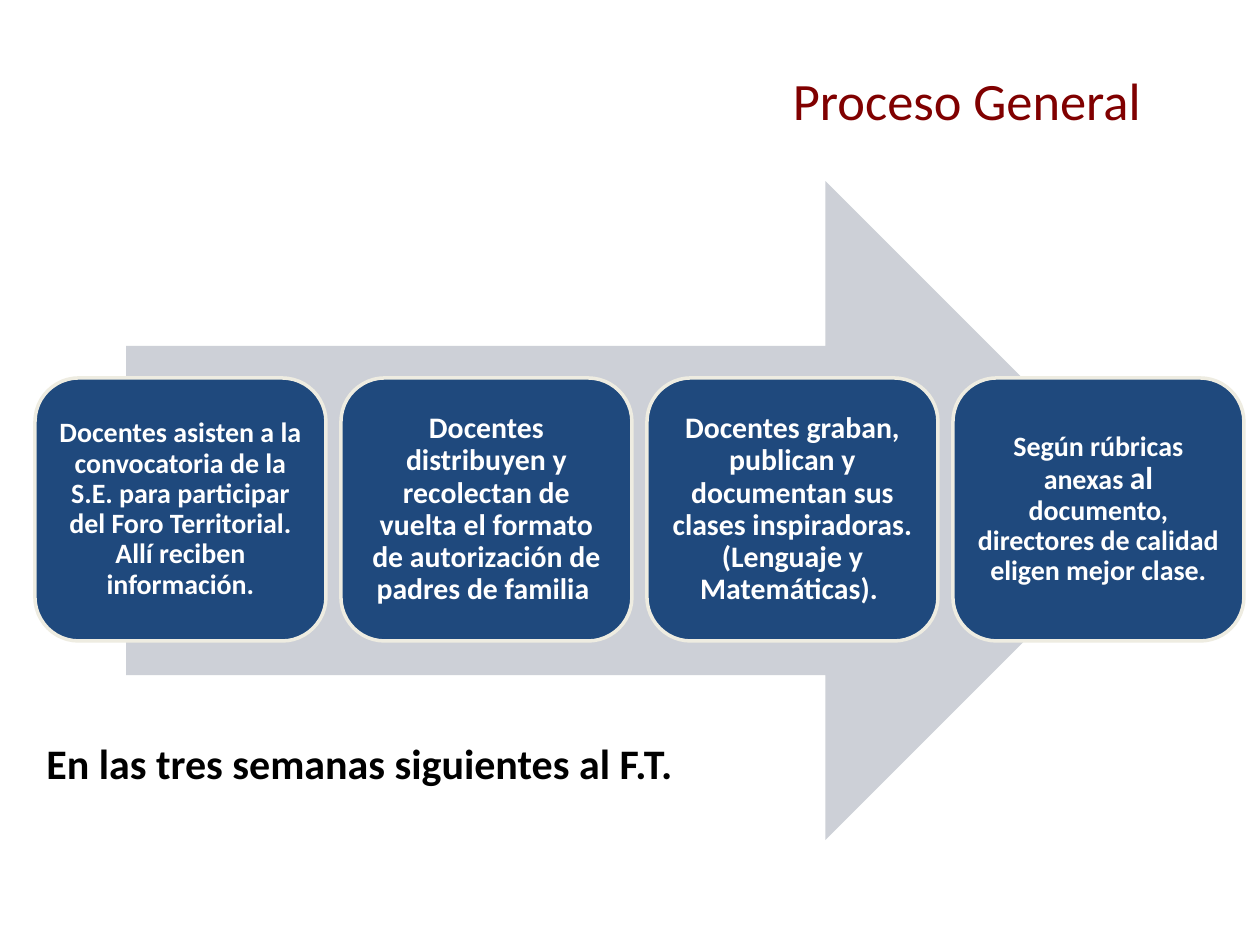
import pptx
import pptx.dml.color
import pptx.enum.shapes
import pptx.enum.text
import pptx.util
from dataclasses import dataclass

SHAPE = pptx.enum.shapes.MSO_SHAPE
ALIGN = pptx.enum.text.PP_ALIGN
ANCHOR = pptx.enum.text.MSO_ANCHOR


@dataclass(frozen=True)
class Theme:
    font: str = "Calibri"
    title: str = "800000"
    caption: str = "000000"
    arrow: str = "CDD0D7"
    card: str = "1F497D"
    card_line: str = "EEECE1"
    card_text: str = "FFFFFF"
    title_size: int = 30
    caption_size: int = 24
    step_small: int = 16
    step_medium: int = 17
    step_large: int = 18


def px(value):
    return pptx.util.Emu(round(value * 914400 / 126))


def rgb(value):
    return pptx.dml.color.RGBColor.from_string(value)


class SlideBuilder:
    def __init__(self, slide, theme):
        self.slide = slide
        self.theme = theme

    def shape(self, kind, area, fill, line=None):
        shape = self.slide.shapes.add_shape(kind, *map(px, area))
        shape.shadow.inherit = False
        shape.fill.solid()
        shape.fill.fore_color.rgb = rgb(fill)
        if line:
            shape.line.color.rgb = rgb(line)
            shape.line.width = pptx.util.Pt(2)
        else:
            shape.line.fill.background()
        return shape

    def add_spans(self, para, spans, color, bold, align):
        para.alignment = align
        for text, size in spans:
            span = para.add_run()
            span.text = text
            span.font.name = self.theme.font
            span.font.size = pptx.util.Pt(size)
            span.font.bold = bold
            span.font.color.rgb = rgb(color)

    def label(self, area, text, size, color, bold=False, align=ALIGN.LEFT, wrap=True):
        box = self.slide.shapes.add_textbox(*map(px, area))
        box.text_frame.word_wrap = wrap
        self.add_spans(box.text_frame.paragraphs[0], [(text, size)], color, bold, align)

    def arrow(self, area):
        self.shape(SHAPE.RIGHT_ARROW, area, self.theme.arrow)

    def card(self, area, spans):
        card = self.shape(SHAPE.ROUNDED_RECTANGLE, area, self.theme.card, self.theme.card_line)
        frame = card.text_frame
        frame.word_wrap = True
        frame.vertical_anchor = ANCHOR.MIDDLE
        frame.margin_left = frame.margin_right = px(9)
        frame.margin_top = frame.margin_bottom = px(9)
        para = frame.paragraphs[0]
        para.line_spacing = 0.9
        self.add_spans(para, spans, self.theme.card_text, True, ALIGN.CENTER)


def main():
    theme = Theme()
    steps = [
        [("Docentes asisten a la convocatoria de la S.E. para participar "
          "del Foro Territorial. Allí reciben información.", theme.step_small)],
        [("Docentes distribuyen y recolectan de vuelta el formato "
          "de autorización de padres de familia ", theme.step_medium)],
        [("Docentes graban, publican y documentan sus clases inspiradoras. "
          "(Lenguaje y Matemáticas). ", theme.step_medium)],
        [("Según rúbricas anexas ", theme.step_small),
         ("al", theme.step_large),
         (" documento, directores de calidad eligen mejor clase.", theme.step_small)],
    ]

    deck = pptx.Presentation()
    deck.slide_width = px(1260)
    deck.slide_height = px(945)
    page = SlideBuilder(deck.slides.add_slide(deck.slide_layouts[6]), theme)

    page.arrow((126, 181, 1029, 659))
    card_left, card_width, card_gap = 35, 291, 15
    for index, spans in enumerate(steps):
        left = card_left + index * (card_width + card_gap)
        page.card((left, 378, card_width, 263), spans)
    page.label((34, 731, 659, 64), "En las tres semanas siguientes al F.T.",
               theme.caption_size, theme.caption, bold=True, wrap=False)
    page.label((620, 62, 694, 78), "Proceso General",
               theme.title_size, theme.title, align=ALIGN.CENTER)

    deck.save("out.pptx")


if __name__ == "__main__":
    main()
